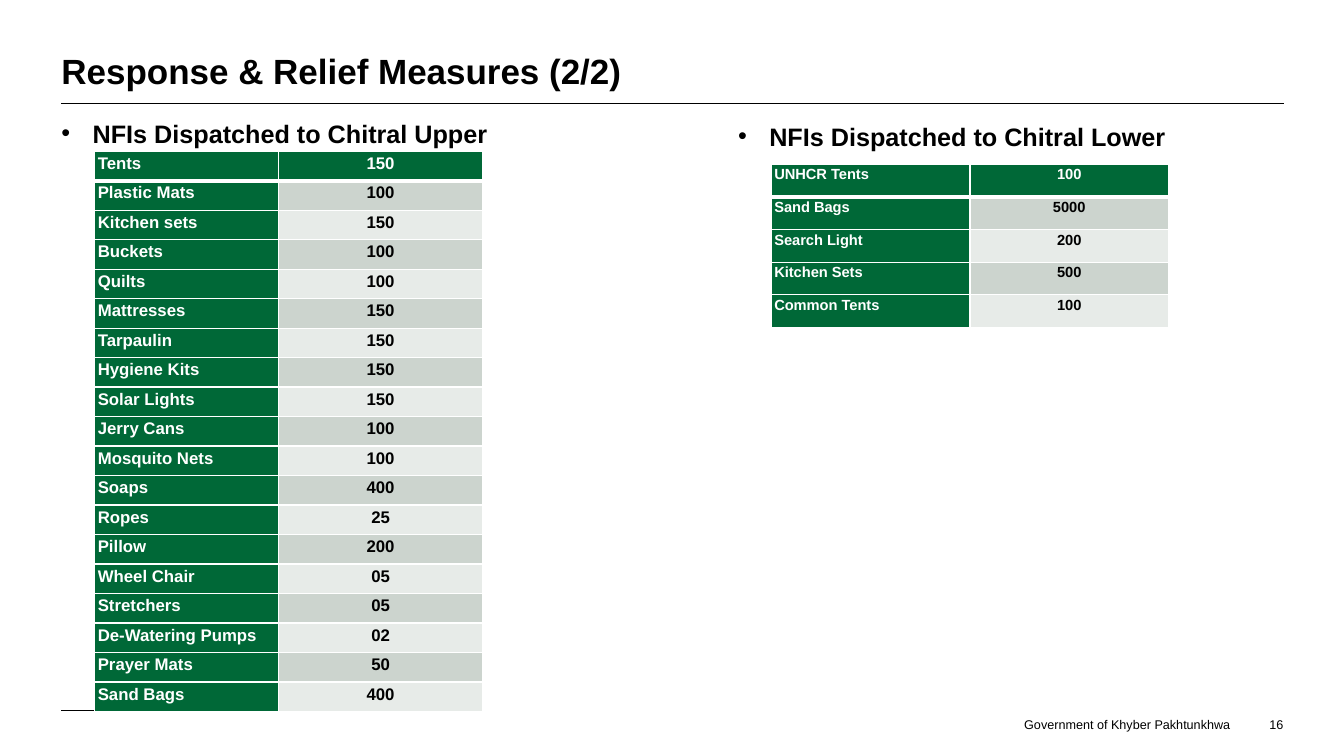
from lxml.etree import SubElement
from pptx import Presentation
from pptx.dml.color import RGBColor
from pptx.enum.shapes import MSO_CONNECTOR
from pptx.enum.text import MSO_ANCHOR, MSO_AUTO_SIZE, PP_ALIGN
from pptx.oxml.ns import qn
from pptx.util import Inches, Pt

COLORS = {"ink": "000000", "paper": "FFFFFF", "green": "006837",
          "dark": "CCD4CE", "light": "E7EBE8"}

UPPER = [
    ("Tents", "150"), ("Plastic Mats", "100"), ("Kitchen sets", "150"),
    ("Buckets", "100"), ("Quilts", "100"), ("Mattresses", "150"),
    ("Tarpaulin", "150"), ("Hygiene Kits", "150"), ("Solar Lights", "150"),
    ("Jerry Cans", "100"), ("Mosquito Nets", "100"), ("Soaps", "400"),
    ("Ropes", "25"), ("Pillow", "200"), ("Wheel Chair", "05"),
    ("Stretchers", "05"), ("De-Watering Pumps", "02"),
    ("Prayer Mats", "50"), ("Sand Bags", "400"),
]
LOWER = [
    ("UNHCR Tents", "100"), ("Sand Bags", "5000"), ("Search Light", "200"),
    ("Kitchen Sets", "500"), ("Common Tents", "100"),
]


def rgb(name):
    return RGBColor.from_string(COLORS[name])


def style(para, size, color="ink", bold=False, align=PP_ALIGN.LEFT):
    para.alignment = align
    for run in para.runs:
        font = run.font
        font.name, font.size, font.bold = "Arial", Pt(size), bold
        font.color.rgb = rgb(color)


def set_frame(frame, anchor, wrap=True):
    frame.margin_left = frame.margin_right = 0
    frame.margin_top = frame.margin_bottom = 0
    frame.word_wrap = wrap
    frame.auto_size = MSO_AUTO_SIZE.NONE
    frame.vertical_anchor = anchor


def add_text(slide, text, box, anchor=MSO_ANCHOR.TOP, wrap=True):
    frame = slide.shapes.add_textbox(*map(Inches, box)).text_frame
    set_frame(frame, anchor, wrap)
    frame.text = text
    return frame.paragraphs[0]


def add_bullet(slide, text, box):
    para = add_text(slide, text, box)
    props = para._p.get_or_add_pPr()
    props.set("marL", str(Inches(0.31)))
    props.set("indent", str(-Inches(0.31)))
    SubElement(props, qn("a:buFont")).set("typeface", "Arial")
    SubElement(props, qn("a:buChar")).set("char", "•")
    para.space_after = Pt(3)
    style(para, 18, bold=True)


def add_rule(slide, left, right, top):
    line = slide.shapes.add_connector(
        MSO_CONNECTOR.STRAIGHT, Inches(left), Inches(top), Inches(right), Inches(top))
    line.line.color.rgb = rgb("ink")
    line.line.width = Pt(0.5)
    SubElement(line._element.spPr, qn("a:effectLst"))


def set_edges(cell, row):
    widths = {"L": 1, "R": 1, "T": 3 if row == 1 else 1, "B": 3 if row == 0 else 1}
    for side, width in widths.items():
        edge = SubElement(cell._tc.get_or_add_tcPr(), qn("a:ln" + side))
        edge.set("w", str(Pt(width)))
        fill = SubElement(edge, qn("a:solidFill"))
        SubElement(fill, qn("a:srgbClr")).set("val", COLORS["paper"])


def fill_cell(cell, text, row, col, size):
    cell.margin_left = cell.margin_right = Inches(0.03)
    cell.margin_top = cell.margin_bottom = 0
    set_edges(cell, row)
    head = row == 0 or col == 0
    cell.fill.solid()
    cell.fill.fore_color.rgb = rgb("green" if head else "dark" if row % 2 else "light")
    cell.text_frame.text = text
    para = cell.text_frame.paragraphs[0]
    para.line_spacing = 1.15
    if col:
        para.space_after = Pt(10)
    style(para, size, "paper" if head else "ink", True,
          PP_ALIGN.CENTER if col else PP_ALIGN.LEFT)


def add_grid(slide, items, left, top, cols, height, size):
    table = slide.shapes.add_table(
        len(items), len(cols), Inches(left), Inches(top),
        Inches(sum(cols)), Inches(height)).table
    table.first_col = True
    for col, width in zip(table.columns, cols):
        col.width = Inches(width)
    for i, item in enumerate(items):
        table.rows[i].height = Inches(height / len(items))
        for j, text in enumerate(item):
            fill_cell(table.cell(i, j), text, i, j, size)


def add_title(slide, text):
    title = slide.shapes.title
    title.left, title.top = Inches(0.61), Inches(0.11)
    title.width, title.height = Inches(11.11), Inches(0.8)
    set_frame(title.text_frame, MSO_ANCHOR.BOTTOM)
    title.text_frame.text = text
    style(title.text_frame.paragraphs[0], 25, bold=True)


def main():
    deck = Presentation()
    deck.slide_width, deck.slide_height = Inches(13.33), Inches(7.5)
    slide = deck.slides.add_slide(deck.slide_layouts[5])

    # Footer and rules
    owner = add_text(slide, "Government of Khyber Pakhtunkhwa",
                     (10.15, 7.11, 2.06, 0.15), MSO_ANCHOR.MIDDLE, False)
    style(owner, 9, align=PP_ALIGN.CENTER)
    number = add_text(slide, "16", (12.37, 7.11, 0.36, 0.15), MSO_ANCHOR.BOTTOM)
    style(number, 9, align=PP_ALIGN.RIGHT)
    add_rule(slide, 0.61, 1.29, 7.05)
    add_rule(slide, 0.61, 12.73, 1.03)

    # Title and headings
    add_title(slide, "Response & Relief Measures (2/2)")
    add_bullet(slide, "NFIs Dispatched to Chitral Upper", (0.61, 1.17, 4.4, 5.73))
    add_bullet(slide, "NFIs Dispatched to Chitral Lower", (7.32, 1.2, 4.68, 5.73))

    # Relief items sent to each district
    add_grid(slide, UPPER, 0.94, 1.5, (1.82, 2.03), 5.56, 12)
    add_grid(slide, LOWER, 7.65, 1.63, (1.97, 1.97), 1.62, 10.5)

    deck.save("out.pptx")


if __name__ == "__main__":
    main()
